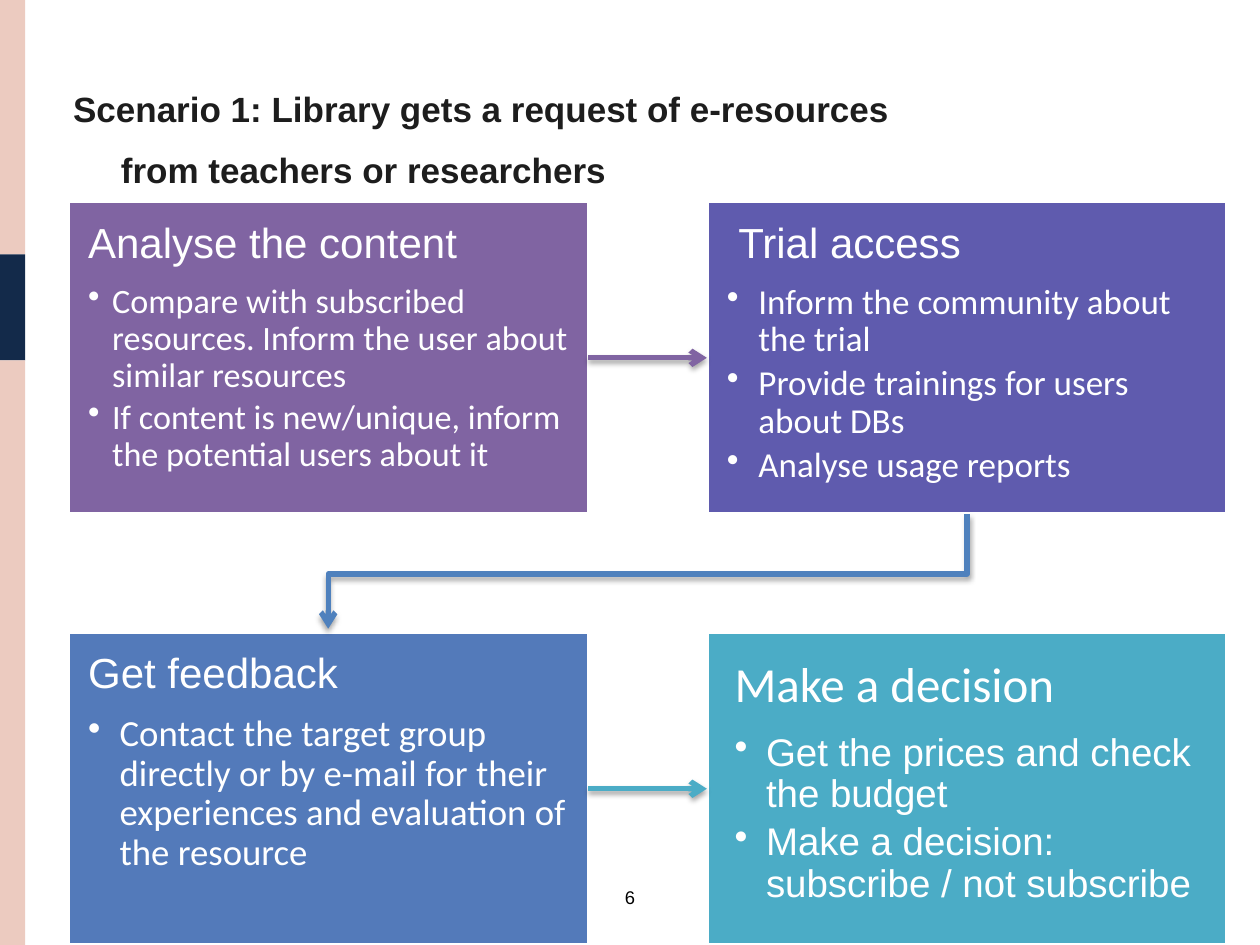
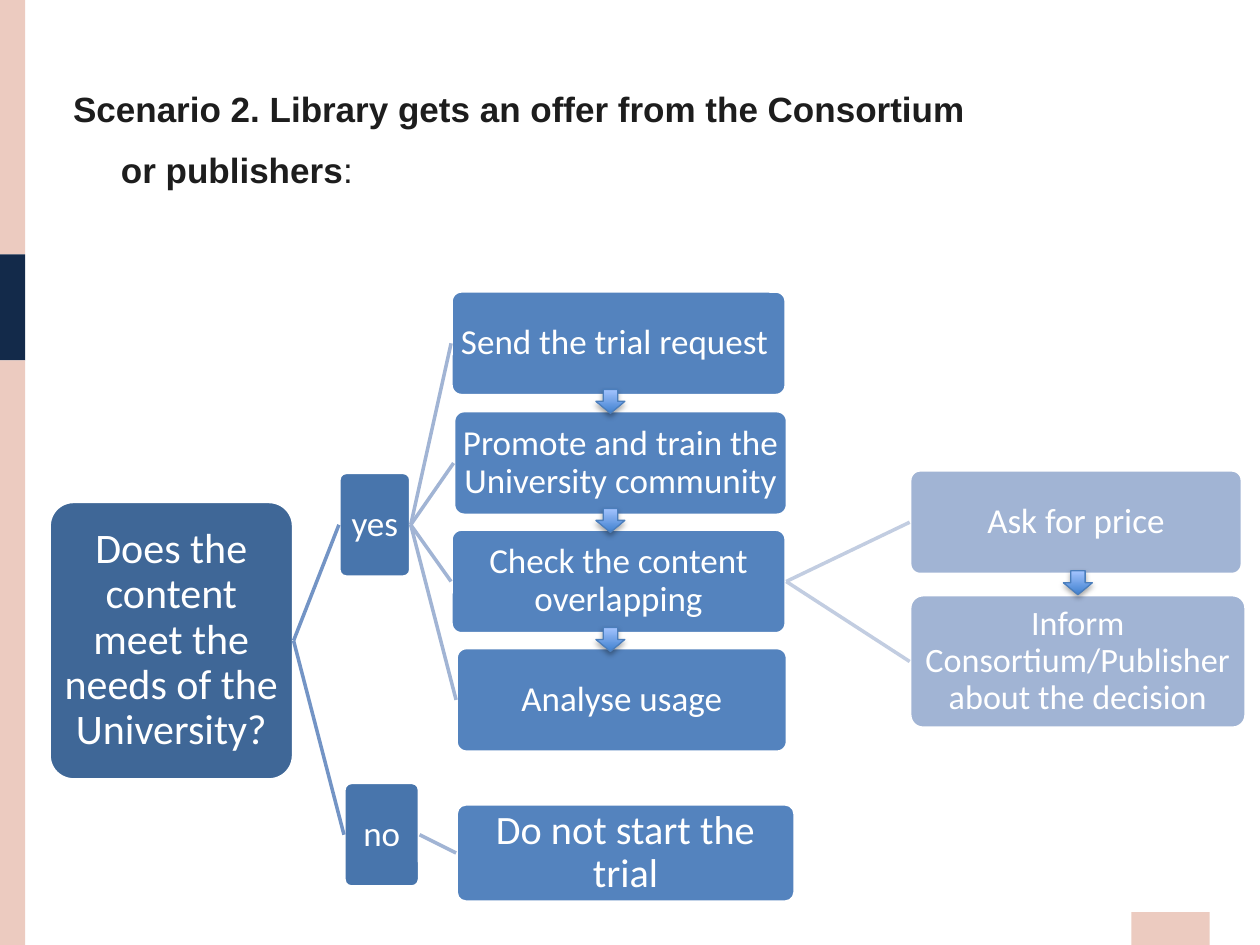
from dataclasses import dataclass
from typing import Any

from lxml import etree
from pptx import Presentation
from pptx.dml.color import RGBColor
from pptx.enum.shapes import MSO_CONNECTOR, MSO_SHAPE
from pptx.enum.text import MSO_ANCHOR, MSO_AUTO_SIZE, PP_ALIGN
from pptx.oxml.ns import qn
from pptx.util import Emu, Inches, Pt

RECT = MSO_SHAPE.RECTANGLE
ROUNDED = MSO_SHAPE.ROUNDED_RECTANGLE
DOWN_ARROW = MSO_SHAPE.DOWN_ARROW
STRAIGHT = MSO_CONNECTOR.STRAIGHT
TOP, MIDDLE = MSO_ANCHOR.TOP, MSO_ANCHOR.MIDDLE
LEFT, CENTER = PP_ALIGN.LEFT, PP_ALIGN.CENTER
NO_FIT = MSO_AUTO_SIZE.NONE
LEFT_SIDE, RIGHT_SIDE = 1, 3

WIDTH, HEIGHT = Inches(10), Inches(7.5)
COLUMNS, ROWS = 100, 75


@dataclass(frozen=True)
class Theme:
    sans: str = "Arial"
    body: str = "Calibri"
    white: str = "FFFFFF"
    black: str = "000000"
    title: str = "1D1D1D"
    blush: str = "ECCBC0"
    navy: str = "132A4A"
    elbow: str = "4F81BD"
    step_edge: str = "4B7EBC"
    step_dark: str = "3F80CE"
    step_light: str = "A4C4FF"
    node_fills: tuple[str, ...] = ("3F6797", "4875AC", "5483BE", "A1B4D4")
    link_lines: tuple[str, ...] = ("7394C5", "A1B4D4", "C2CDE1")
    title_size: float = 20
    node_size: float = 20
    page_size: float = 10.5
    line_spacing: float = 0.9
    heading_gap: float = 0.4
    bullet_gap: float = 0.17
    frame: float = 2
    arrow: float = 3


THEME = Theme()


@dataclass(frozen=True)
class Box:
    x: float
    y: float
    w: float
    h: float

    def emu(self) -> tuple[Emu, Emu, Emu, Emu]:
        return col(self.x), row(self.y), col(self.w), row(self.h)


@dataclass(frozen=True)
class Band:
    box: Box
    fill: str


@dataclass(frozen=True)
class Card:
    heading: str
    bullets: tuple[str, ...]
    fill: str
    heading_size: float
    bullet_size: float
    heading_font: str = THEME.sans
    bullet_font: str = THEME.body
    heading_indent: float = 0
    bullet_indent: float = 0.25
    inset: float = 0.16


@dataclass(frozen=True)
class Node:
    key: str
    text: str
    box: Box
    level: int
    parent: str = ""
    size: float = THEME.node_size


BANDS = (
    Band(Box(0, 0, 2, 20.2), THEME.blush),
    Band(Box(0, 20.2, 2, 8.4), THEME.navy),
    Band(Box(0, 28.6, 2, 46.4), THEME.blush),
    Band(Box(89.8, 72.4, 6.2, 2.6), THEME.blush),
)

CARD_GRID = Box(5.4, 16, 41.3, 24.8)
CARD_PITCH_X, CARD_PITCH_Y = 50.7, 34.2
CARDS = (
    Card("Analyse the content",
         ("Compare with subscribed resources. Inform the user about similar resources",
          "If content is new/unique, inform the potential users about it"),
         "8064A2", 24, 19.5, bullet_indent=0.19),
    Card("Trial access",
         ("Inform the community about the trial",
          "Provide trainings for users about DBs",
          "Analyse usage reports"),
         "5F5BAE", 24, 20, heading_indent=0.09),
    Card("Get feedback",
         ("Contact the target group directly or by e-mail for their experiences "
          "and evaluation of the resource",),
         "537ABA", 24, 21),
    Card("Make a decision",
         ("Get the prices and check the budget",
          "Make a decision: subscribe / not subscribe"),
         "4BACC6", 28, 22, THEME.body, THEME.sans, inset=0.22),
)
CARD_ARROWS = ((0, 1, CARDS[0].fill), (2, 3, CARDS[3].fill))

NODES = (
    Node("question", "Does the content meet the needs of the University?",
         Box(3.9, 39.8, 19.4, 22.1), 0, size=24),
    Node("yes", "yes", Box(26.9, 37.5, 5.7, 8.3), 1, "question"),
    Node("no", "no", Box(27.3, 62.1, 6, 8.3), 1, "question"),
    Node("request", "Send the trial request ", Box(35.8, 23.1, 26.6, 8.3), 2, "yes"),
    Node("promote", "Promote and train the University community",
         Box(36, 32.6, 26.5, 8.3), 2, "yes"),
    Node("overlap", "Check the content overlapping", Box(35.8, 42, 26.6, 8.3), 2, "yes"),
    Node("usage", "Analyse usage", Box(36.2, 51.4, 26.3, 8.3), 2, "yes"),
    Node("stop", "Do not start the trial", Box(36.2, 63.8, 26.9, 7.8), 2, "no", 23),
    Node("price", "Ask for price", Box(72.2, 37.3, 26.4, 8.3), 3, "overlap"),
    Node("inform", "Inform Consortium/Publisher about the decision",
         Box(72.2, 47.2, 26.7, 10.6), 3, "overlap", 19.5),
)
STEPS = tuple(Box(47.3, 30.9 + 9.45 * i, 2.3, 1.9) for i in range(3)) + (
    Box(84.4, 45.3, 2.3, 1.9),)


def col(n: float) -> Emu:
    return Emu(round(WIDTH * n / COLUMNS))


def row(n: float) -> Emu:
    return Emu(round(HEIGHT * n / ROWS))


def rgb(value: str) -> RGBColor:
    return RGBColor.from_string(value)


def add_run(p: Any, text: str, font: str, size: float, color: str, bold: bool = False) -> None:
    r = p.add_run()
    r.text = text
    r.font.name, r.font.size, r.font.bold = font, Pt(size), bold
    r.font.color.rgb = rgb(color)


def set_indent(p: Any, left: float, first: float) -> Any:
    pPr = p._p.get_or_add_pPr()
    pPr.set("marL", str(Inches(left)))
    pPr.set("indent", str(Inches(first)))
    return pPr


def set_effects(shape: Any, shadow: bool) -> None:
    spPr = shape.element.spPr
    effects = etree.SubElement(spPr, qn("a:effectLst"))
    if shadow:
        outer = etree.SubElement(effects, qn("a:outerShdw"), blurRad=str(Pt(3.1)),
                                 dist=str(Pt(1.8)), dir="5400000", rotWithShape="0")
        clr = etree.SubElement(outer, qn("a:srgbClr"), val=THEME.black)
        etree.SubElement(clr, qn("a:alpha"), val="35000")


def style_line(shape: Any, color: str, width: float, arrow: bool = False) -> None:
    shape.line.color.rgb = rgb(color)
    shape.line.width = Pt(width)
    if arrow:
        etree.SubElement(shape.line._get_or_add_ln(), qn("a:tailEnd"), type="arrow")
    set_effects(shape, arrow)


def add_block(s: Any, kind: Any, box: Box, fill: str, framed: bool = True) -> Any:
    sp = s.shapes.add_shape(kind, *box.emu())
    sp.fill.solid()
    sp.fill.fore_color.rgb = rgb(fill)
    if framed:
        style_line(sp, THEME.white, THEME.frame)
    else:
        sp.line.fill.background()
        set_effects(sp, False)
    return sp


def prepare_frame(sp: Any, anchor: Any, inset: float) -> Any:
    tf = sp.text_frame
    tf.word_wrap = True
    tf.vertical_anchor = anchor
    tf.margin_left = tf.margin_right = tf.margin_top = tf.margin_bottom = Inches(inset)
    return tf


def add_link(s: Any, start: Any, end: Any, color: str, width: float, arrow: bool = False) -> None:
    link = s.shapes.add_connector(STRAIGHT, 0, 0, 0, 0)
    link.begin_connect(start, RIGHT_SIDE)
    link.end_connect(end, LEFT_SIDE)
    style_line(link, color, width, arrow)


def add_bands(s: Any) -> None:
    for band in BANDS:
        sp = add_block(s, RECT, band.box, band.fill, framed=False)
        s.slide_layout.shapes.element.append(sp.element)


def add_title(s: Any, width: float, text: str, light_end: str = "") -> None:
    title = s.shapes.title
    title.left, title.top, title.width, title.height = Box(4.8, 4.9, width, 6).emu()
    tf = title.text_frame
    tf.auto_size, tf.vertical_anchor, tf.word_wrap = NO_FIT, TOP, True
    p = tf.paragraphs[0]
    p.alignment, p.line_spacing = LEFT, Pt(35)
    set_indent(p, 0.38, -0.38)
    add_run(p, text, THEME.sans, THEME.title_size, THEME.title, True)
    if light_end:
        add_run(p, light_end, THEME.sans, THEME.title_size, THEME.title)


def add_page_number(s: Any, number: int) -> None:
    tf = s.shapes.add_textbox(*Box(48.1, 69.8, 3.8, 2.8).emu()).text_frame
    tf.word_wrap = False
    p = tf.paragraphs[0]
    p.alignment = CENTER
    add_run(p, str(number), THEME.sans, THEME.page_size, THEME.black)


def add_card(s: Any, card: Card, box: Box) -> Any:
    sp = add_block(s, RECT, box, card.fill)
    tf = prepare_frame(sp, TOP, card.inset)
    p = tf.paragraphs[0]
    p.alignment, p.line_spacing = LEFT, THEME.line_spacing
    p.space_after = Pt(card.heading_size * THEME.heading_gap)
    set_indent(p, card.heading_indent, 0)
    add_run(p, card.heading, card.heading_font, card.heading_size, THEME.white)
    for text in card.bullets:
        p = tf.add_paragraph()
        p.level = 1
        pPr = set_indent(p, card.bullet_indent, -card.bullet_indent)
        etree.SubElement(pPr, qn("a:buChar"), char="•")
        p.alignment, p.line_spacing = LEFT, THEME.line_spacing
        p.space_after = Pt(card.bullet_size * THEME.bullet_gap)
        add_run(p, text, card.bullet_font, card.bullet_size, THEME.white)
    return sp


def add_elbow(s: Any, start: Any, end: Any) -> None:
    x1, y1 = start.left + start.width // 2, start.top + start.height
    x2, y2 = end.left + end.width // 2, end.top - row(0.3)
    bend = (y1 + y2) // 2 + row(0.2)
    path = s.shapes.build_freeform(x1, y1)
    path.add_line_segments([(x1, bend), (x2, bend), (x2, y2)], close=False)
    sp = path.convert_to_shape()
    sp.fill.background()
    style_line(sp, THEME.elbow, THEME.arrow, arrow=True)


def add_node(s: Any, node: Node) -> Any:
    sp = add_block(s, ROUNDED, node.box, THEME.node_fills[node.level])
    sp.adjustments[0] = 0.1
    p = prepare_frame(sp, MIDDLE, 0.01).paragraphs[0]
    p.alignment, p.line_spacing = CENTER, THEME.line_spacing
    add_run(p, node.text, THEME.body, node.size, THEME.white)
    return sp


def add_step(s: Any, box: Box) -> None:
    sp = s.shapes.add_shape(DOWN_ARROW, *box.emu())
    sp.fill.gradient()
    sp.fill.gradient_angle = 90
    for stop, color in zip(sp.fill.gradient_stops, (THEME.step_dark, THEME.step_light)):
        stop.color.rgb = rgb(color)
    style_line(sp, THEME.step_edge, 0.75)
    sp.element.spPr.remove(sp.element.spPr.find(qn("a:effectLst")))
    set_effects(sp, True)


def build_request_slide(s: Any) -> None:
    add_title(s, 70, "Scenario 1: Library gets a request of e-resources from teachers or researchers")
    add_page_number(s, 6)
    grid = CARD_GRID
    boxes = [add_card(s, card, Box(grid.x + i % 2 * CARD_PITCH_X, grid.y + i // 2 * CARD_PITCH_Y,
                                   grid.w, grid.h))
             for i, card in enumerate(CARDS)]
    for start, end, color in CARD_ARROWS:
        add_link(s, boxes[start], boxes[end], color, THEME.arrow, arrow=True)
    add_elbow(s, boxes[1], boxes[2])


def build_offer_slide(s: Any) -> None:
    add_title(s, 75.2, "Scenario 2. Library gets an offer from the Consortium or publishers", ":")
    drawn: dict[str, Any] = {}
    for node in NODES:
        drawn[node.key] = add_node(s, node)
        if node.parent:
            add_link(s, drawn[node.parent], drawn[node.key],
                     THEME.link_lines[node.level - 1], THEME.frame)
    for box in STEPS:
        add_step(s, box)


def main() -> None:
    prs = Presentation()
    prs.slide_width, prs.slide_height = WIDTH, HEIGHT
    layout = prs.slide_layouts[5]
    request, offer = (prs.slides.add_slide(layout) for _ in range(2))
    add_bands(request)
    build_request_slide(request)
    build_offer_slide(offer)
    prs.save("out.pptx")


if __name__ == "__main__":
    main()
